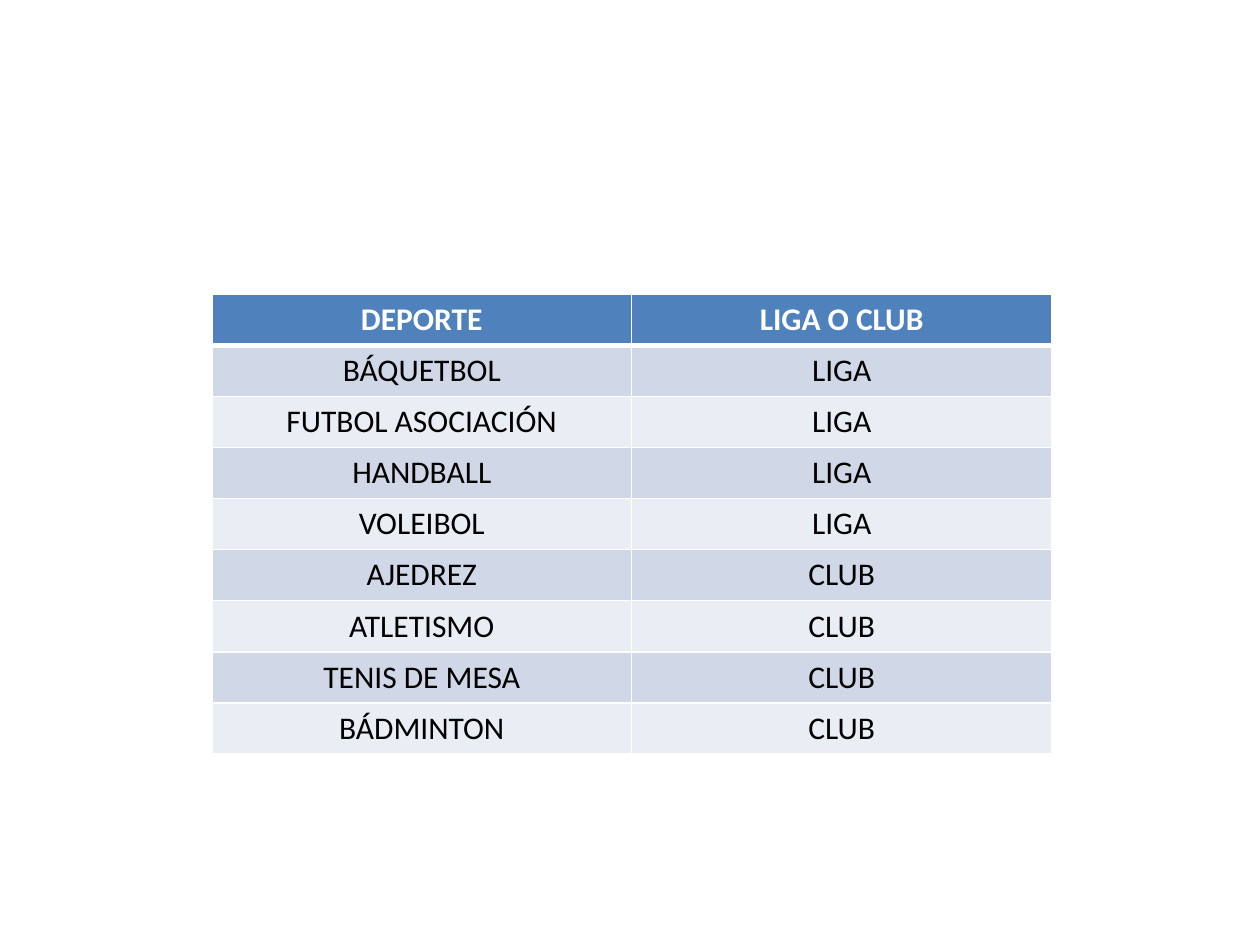
from lxml import etree
from pptx import Presentation
from pptx.dml import color
from pptx.enum import text
from pptx.oxml import ns
from pptx.util import Cm, Pt

HEADERS = ("DEPORTE", "LIGA O CLUB")
SPORTS = {
    "LIGA": ("BÁQUETBOL", "FUTBOL ASOCIACIÓN", "HANDBALL", "VOLEIBOL"),
    "CLUB": ("AJEDREZ", "ATLETISMO", "TENIS DE MESA", "BÁDMINTON"),
}
WHITE = "FFFFFF"
BLACK = "000000"
HEADER_BLUE = "4F81BD"
BANDS = ("E9EDF4", "D0D8E8")


def rgb(value):
    return color.RGBColor.from_string(value)


def set_borders(cell, widths):
    properties = cell._tc.get_or_add_tcPr()
    for side, width in widths.items():
        line = etree.SubElement(properties, ns.qn(f"a:ln{side}"), w=str(Pt(width)))
        fill = etree.SubElement(line, ns.qn("a:solidFill"))
        etree.SubElement(fill, ns.qn("a:srgbClr"), val=WHITE)


def style_cell(cell, label, row_index):
    is_header = row_index == 0
    set_borders(cell, {
        "L": 1,
        "R": 1,
        "T": 3 if row_index == 1 else 1,
        "B": 3 if is_header else 1,
    })
    cell.fill.solid()
    cell.fill.fore_color.rgb = rgb(HEADER_BLUE if is_header else BANDS[row_index % 2])
    cell.text_frame.text = label
    paragraph = cell.text_frame.paragraphs[0]
    paragraph.alignment = text.PP_ALIGN.CENTER
    font = paragraph.runs[0].font
    font.name = "Calibri"
    font.size = Pt(18)
    font.bold = is_header
    font.color.rgb = rgb(WHITE if is_header else BLACK)


def add_sports_table(slide, left, top, width, height):
    rows = [HEADERS] + [
        (sport, group) for group, sports in SPORTS.items() for sport in sports
    ]
    table = slide.shapes.add_table(
        len(rows), len(HEADERS), left, top, width, height
    ).table
    for row_index, labels in enumerate(rows):
        for column_index, label in enumerate(labels):
            style_cell(table.cell(row_index, column_index), label, row_index)


def main():
    presentation = Presentation()
    presentation.slide_width = Cm(25.4)
    presentation.slide_height = Cm(19.05)
    slide = presentation.slides.add_slide(presentation.slide_layouts[6])
    add_sports_table(slide, Cm(4.27), Cm(5.93), Cm(16.93), Cm(9.27))
    presentation.save("out.pptx")


if __name__ == "__main__":
    main()
